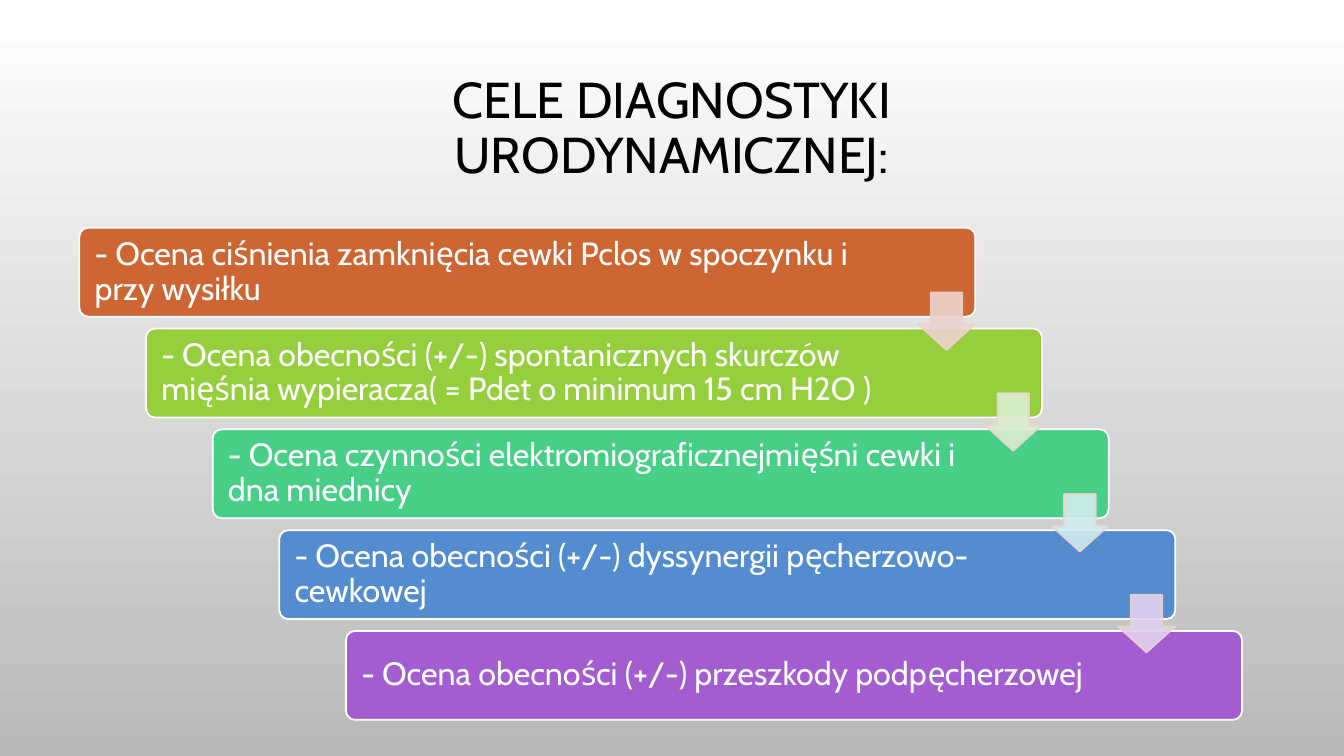
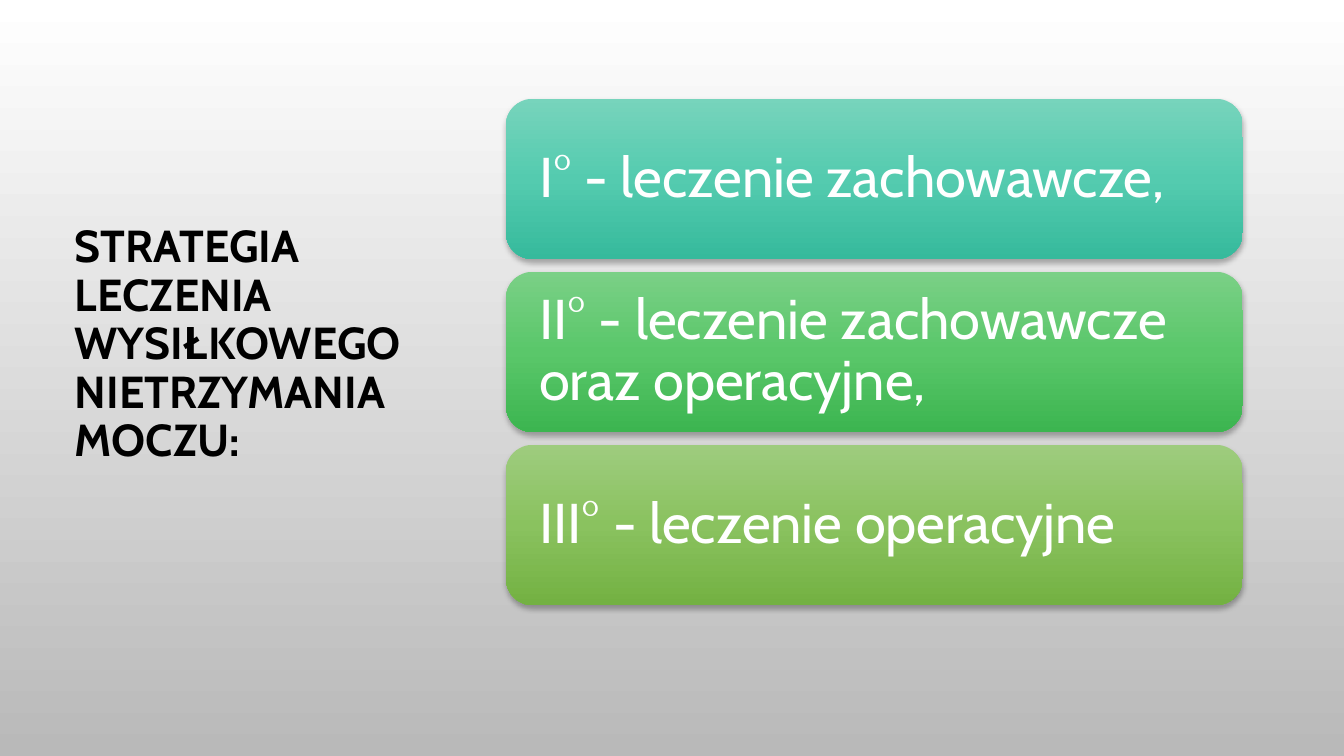
from copy import deepcopy
from typing import NamedTuple, Optional

from pptx import Presentation
from pptx.dml.color import RGBColor
from pptx.dml.fill import FillFormat
from pptx.enum.shapes import MSO_SHAPE as Preset
from pptx.enum.text import MSO_ANCHOR as Anchor
from pptx.enum.text import MSO_AUTO_SIZE as AutoSize
from pptx.enum.text import PP_ALIGN as Align
from pptx.oxml import parse_xml
from pptx.oxml.ns import nsdecls, qn
from pptx.oxml.xmlchemy import BaseOxmlElement as Element
from pptx.shapes.autoshape import Shape
from pptx.slide import Slide
from pptx.text.text import TextFrame
from pptx.util import Cm, Pt

# Shared style
FONT = "Cabin"
LINE_SPACING = 0.9
BLACK = RGBColor(0x00, 0x00, 0x00)
WHITE = RGBColor(0xFF, 0xFF, 0xFF)
GREY = RGBColor(0xB9, 0xB9, 0xB9)
ARROW_LINE = RGBColor(0xED, 0xD3, 0xCE)
TITLE_ONLY = 5


class Box(NamedTuple):
    """Left, top, width and height in centimetres."""
    left: float
    top: float
    width: float
    height: float

    def moved(self, right: float, down: float) -> "Box":
        return self._replace(left=self.left + right, top=self.top + down)

    def lengths(self) -> list[Cm]:
        return [Cm(value) for value in self]


class Goal(NamedTuple):
    text: str
    fill: RGBColor
    arrow: Optional[RGBColor] = None


class Stage(NamedTuple):
    text: str
    gradient: tuple[RGBColor, ...]


# Staircase of goals: first step, then the offset to each next one
FIRST_GOAL = Box(2, 5.74, 22.58, 2.24)
GOAL_STEP = (1.68, 2.54)
ARROW_SIZE = 1.45
ARROW_DROP = 1.63
GOALS = [
    Goal("- Ocena ciśnienia zamknięcia cewki Pclos w spoczynku i przy wysiłku",
         RGBColor(0xCE, 0x66, 0x33), RGBColor(0xED, 0xD3, 0xCE)),
    Goal("- Ocena obecności (+/-) spontanicznych skurczów mięśnia "
         "wypieracza( = Pdet o minimum 15 cm H2O )",
         RGBColor(0x95, 0xCF, 0x3E), RGBColor(0xDB, 0xED, 0xCF)),
    Goal("- Ocena czynności elektromiograficznejmięśni cewki i dna miednicy",
         RGBColor(0x48, 0xCF, 0x87), RGBColor(0xD1, 0xEC, 0xEE)),
    Goal("- Ocena obecności (+/-) dyssynergii pęcherzowo-cewkowej",
         RGBColor(0x53, 0x8D, 0xD0), RGBColor(0xE0, 0xD2, 0xEE)),
    Goal("- Ocena obecności (+/-) przeszkody podpęcherzowej",
         RGBColor(0xA3, 0x5D, 0xD1)),
]

# Stack of treatment stages
FIRST_STAGE = Box(12.75, 2.49, 18.57, 4.04)
STAGE_STEP = 4.36
STAGES = [
    Stage("I° - leczenie zachowawcze,",
          (RGBColor(0x77, 0xD4, 0xBC), RGBColor(0x54, 0xCB, 0xAF),
           RGBColor(0x36, 0xBA, 0x9C))),
    Stage("II° - leczenie zachowawcze oraz operacyjne,",
          (RGBColor(0x7A, 0xD0, 0x86), RGBColor(0x5A, 0xC7, 0x6A),
           RGBColor(0x3C, 0xB5, 0x50))),
    Stage("III° - leczenie operacyjne",
          (RGBColor(0x9E, 0xCC, 0x7E), RGBColor(0x8A, 0xC2, 0x5F),
           RGBColor(0x73, 0xB1, 0x42))),
]


def paint_gradient(fill: FillFormat, owner: Element,
                   colours: tuple[RGBColor, ...]) -> None:
    """Fill from top to bottom with evenly spaced colours."""
    fill.gradient()
    fill.gradient_angle = 270
    stop_list = owner.find(f".//{qn('a:gsLst')}")
    for _ in colours[2:]:
        stop_list.insert(1, deepcopy(stop_list[0]))
    for index, (stop, colour) in enumerate(zip(fill.gradient_stops, colours)):
        stop.position = index / (len(colours) - 1)
        stop.color.rgb = colour


def make_translucent(shape: Shape, percent: int) -> None:
    """Give the fill and line colours of a shape an opacity."""
    for colour in shape.element.spPr.iter(qn("a:srgbClr")):
        colour.append(parse_xml(
            f'<a:alpha {nsdecls("a")} val="{percent * 1000}"/>'))


def add_soft_shadow(shape: Shape) -> None:
    effects = shape.element.spPr.find(qn("a:effectLst"))
    effects.append(parse_xml(
        f'<a:outerShdw {nsdecls("a")} blurRad="{Pt(4)}" dist="{Pt(2)}" '
        'dir="5400000" rotWithShape="0"><a:srgbClr val="000000">'
        '<a:alpha val="28000"/></a:srgbClr></a:outerShdw>'))


def write(frame: TextFrame, text: str, size: int, colour: RGBColor,
          align: Align = Align.LEFT, bold: bool = False) -> None:
    frame.word_wrap = True
    frame.auto_size = AutoSize.NONE
    frame.vertical_anchor = Anchor.MIDDLE
    paragraph = frame.paragraphs[0]
    paragraph.text = text
    paragraph.alignment = align
    paragraph.line_spacing = LINE_SPACING
    font = paragraph.font
    font.name, font.size, font.bold = FONT, Pt(size), bold
    font.color.rgb = colour


def add_titled_slide(presentation: Presentation, title: str, box: Box,
                     size: int, align: Align, bold: bool) -> Slide:
    slide = presentation.slides.add_slide(
        presentation.slide_layouts[TITLE_ONLY])
    shape = slide.shapes.title
    shape.left, shape.top, shape.width, shape.height = box.lengths()
    write(shape.text_frame, title, size, BLACK, align, bold)
    return slide


def add_preset(slide: Slide, preset: Preset, box: Box) -> Shape:
    shape = slide.shapes.add_shape(preset, *box.lengths())
    shape.shadow.inherit = False
    return shape


def set_solid(shape: Shape, fill: RGBColor, line: RGBColor) -> None:
    shape.fill.solid()
    shape.fill.fore_color.rgb = fill
    shape.line.color.rgb = line
    shape.line.width = Pt(1.25)


def set_insets(frame: TextFrame, left: float, right: float,
               vertical: float) -> None:
    frame.margin_left, frame.margin_right = Cm(left), Cm(right)
    frame.margin_top = frame.margin_bottom = Cm(vertical)


def add_goal(slide: Slide, goal: Goal, box: Box) -> None:
    shape = add_preset(slide, Preset.ROUNDED_RECTANGLE, box)
    shape.adjustments[0] = 0.1
    set_solid(shape, goal.fill, WHITE)
    set_insets(shape.text_frame, 0.32, 2.87, 0.32)
    write(shape.text_frame, goal.text, 23, WHITE)


def add_goal_arrow(slide: Slide, colour: RGBColor, goal_box: Box) -> None:
    """Place an arrow at the lower right corner of a goal."""
    box = Box(goal_box.left + goal_box.width - ARROW_SIZE,
              goal_box.top + ARROW_DROP, ARROW_SIZE, ARROW_SIZE)
    arrow = add_preset(slide, Preset.DOWN_ARROW, box)
    arrow.adjustments[0], arrow.adjustments[1] = 0.55, 0.45
    set_solid(arrow, colour, ARROW_LINE)
    make_translucent(arrow, 90)


def add_stage(slide: Slide, stage: Stage, box: Box) -> None:
    shape = add_preset(slide, Preset.ROUNDED_RECTANGLE, box)
    paint_gradient(shape.fill, shape.element.spPr, stage.gradient)
    shape.line.fill.background()
    add_soft_shadow(shape)
    set_insets(shape.text_frame, 0.64, 0.64, 0.64)
    write(shape.text_frame, stage.text, 40, WHITE)


def build_goals_slide(presentation: Presentation) -> None:
    slide = add_titled_slide(
        presentation, "CELE DIAGNOSTYKI\vURODYNAMICZNEJ:",
        Box(2.54, 1.73, 28.78, 3.08), 36, Align.CENTER, False)
    step_right, step_down = GOAL_STEP
    boxes = [FIRST_GOAL.moved(index * step_right, index * step_down)
             for index in range(len(GOALS))]
    for goal, box in zip(GOALS, boxes):
        add_goal(slide, goal, box)
    # Arrows lie over the boxes
    for goal, box in zip(GOALS, boxes):
        if goal.arrow is not None:
            add_goal_arrow(slide, goal.arrow, box)


def build_strategy_slide(presentation: Presentation) -> None:
    slide = add_titled_slide(
        presentation,
        "STRATEGIA LECZENIA\vWYSIŁKOWEGO NIETRZYMANIA MOCZU:",
        Box(1.63, 2.77, 9.32, 11.85), 32, Align.LEFT, True)
    for index, stage in enumerate(STAGES):
        add_stage(slide, stage, FIRST_STAGE.moved(0, index * STAGE_STEP))


def main() -> None:
    presentation = Presentation()
    presentation.slide_width, presentation.slide_height = Cm(33.87), Cm(19.05)
    # Background shared by all slides
    master = presentation.slide_master
    paint_gradient(master.background.fill, master.element, (WHITE, GREY))
    build_goals_slide(presentation)
    build_strategy_slide(presentation)
    presentation.save("out.pptx")


if __name__ == "__main__":
    main()
